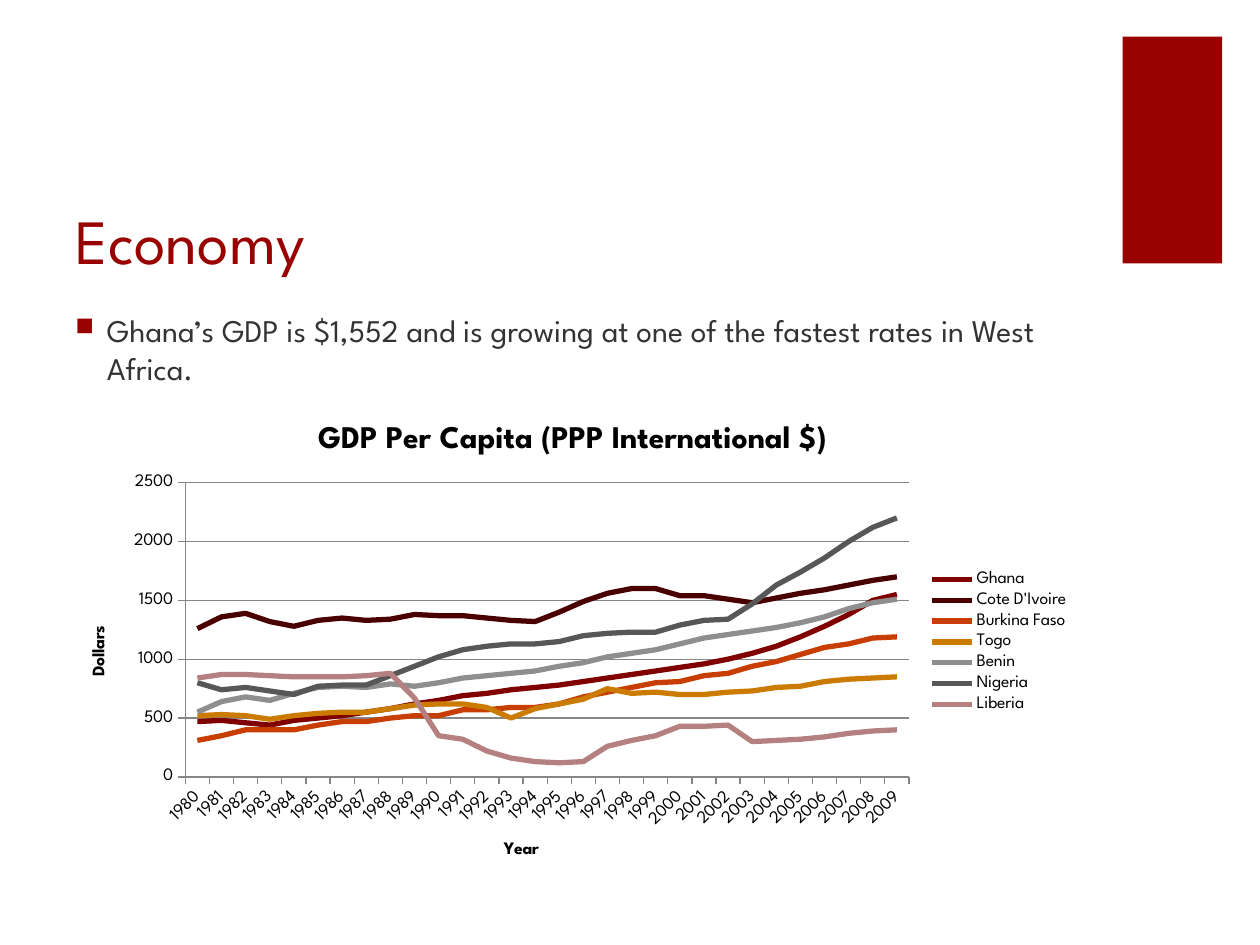
from lxml.etree import SubElement
from pptx import Presentation
from pptx.chart.data import CategoryChartData
from pptx.dml.color import RGBColor
from pptx.enum.chart import XL_CHART_TYPE, XL_LEGEND_POSITION, XL_TICK_MARK
from pptx.enum.shapes import MSO_SHAPE
from pptx.enum.text import MSO_ANCHOR
from pptx.oxml import parse_xml
from pptx.oxml.ns import nsdecls, qn
from pptx.util import Inches, Pt

FONT = "League Spartan"
COLORS = {
    "accent": "990000", "body": "333333", "label": "000000", "axis": "868686",
    "Ghana": "800000", "Cote D'Ivoire": "4A0000", "Burkina Faso": "C83D00",
    "Togo": "CB7B00", "Benin": "8E8E8E", "Nigeria": "575757", "Liberia": "B58080",
}
YEARS = range(1980, 2010)
GDP = {
    "Ghana": [470, 480, 460, 440, 480, 500, 520, 550, 580, 620,
              650, 690, 710, 740, 760, 780, 810, 840, 870, 900,
              930, 960, 1000, 1050, 1110, 1190, 1280, 1380, 1500, 1550],
    "Cote D'Ivoire": [1260, 1360, 1390, 1320, 1280, 1330, 1350, 1330, 1340, 1380,
                      1370, 1370, 1350, 1330, 1320, 1400, 1490, 1560, 1600, 1600,
                      1540, 1540, 1510, 1480, 1520, 1560, 1590, 1630, 1670, 1700],
    "Burkina Faso": [310, 350, 400, 400, 400, 440, 470, 470, 500, 520,
                     520, 570, 570, 590, 590, 620, 680, 720, 760, 800,
                     810, 860, 880, 940, 980, 1040, 1100, 1130, 1180, 1190],
    "Togo": [520, 530, 520, 490, 520, 540, 550, 550, 580, 610,
             620, 620, 590, 500, 580, 620, 660, 750, 710, 720,
             700, 700, 720, 730, 760, 770, 810, 830, 840, 850],
    "Benin": [550, 640, 680, 650, 710, 760, 770, 760, 790, 770,
              800, 840, 860, 880, 900, 940, 970, 1020, 1050, 1080,
              1130, 1180, 1210, 1240, 1270, 1310, 1360, 1430, 1480, 1510],
    "Nigeria": [800, 740, 760, 730, 700, 770, 780, 780, 860, 940,
                1020, 1080, 1110, 1130, 1130, 1150, 1200, 1220, 1230, 1230,
                1290, 1330, 1340, 1470, 1630, 1740, 1860, 2000, 2120, 2200],
    "Liberia": [840, 870, 870, 860, 850, 850, 850, 860, 880, 670,
                350, 320, 220, 160, 130, 120, 130, 260, 310, 350,
                430, 430, 440, 300, 310, 320, 340, 370, 390, 400],
}


def rgb(name):
    return RGBColor.from_string(COLORS[name])


def style_font(font, size, color, bold=False):
    font.name, font.size, font.bold = FONT, Pt(size), bold
    font.color.rgb = rgb(color)


def add_accent_block(slide, box):
    block = slide.shapes.add_shape(MSO_SHAPE.RECTANGLE, *box)
    block.shadow.inherit = False
    block.fill.solid()
    block.fill.fore_color.rgb = rgb("accent")
    block.line.fill.background()


def add_text(slide, box, text, size, color, anchor):
    frame = slide.shapes.add_textbox(*box).text_frame
    frame.word_wrap = True
    frame.vertical_anchor = anchor
    paragraph = frame.paragraphs[0]
    paragraph.text = text
    style_font(paragraph.font, size, color)
    return paragraph


def add_heading(slide, box):
    add_text(slide, box, "Economy", 36, "accent", MSO_ANCHOR.BOTTOM)


def add_bullet_text(slide, box):
    text = "Ghana’s GDP is $1,552 and is growing at one of the fastest rates in West Africa."
    paragraph = add_text(slide, box, text, 18, "body", MSO_ANCHOR.TOP)
    # Square bullet with a hanging indent
    props = paragraph._p.get_or_add_pPr()
    props.set("marL", str(Inches(0.25)))
    props.set("indent", str(-Inches(0.25)))
    bullet = [
        f'<a:buClr {nsdecls("a")}><a:srgbClr val="{COLORS["accent"]}"/></a:buClr>',
        f'<a:buSzPct {nsdecls("a")} val="80000"/>',
        f'<a:buChar {nsdecls("a")} char="■"/>',
    ]
    for position, xml in enumerate(bullet):
        props.insert(position, parse_xml(xml))


def set_title(owner, text, size):
    owner.has_title = True
    frame = getattr(owner, "chart_title", None) or owner.axis_title
    frame = frame.text_frame
    frame.text = text
    style_font(frame.paragraphs[0].font, size, "label", bold=True)


def set_plot_layout(chart, **shares):
    plot_area = chart._chartSpace.chart.plotArea
    for old in plot_area.findall(qn("c:layout")):
        plot_area.remove(old)
    layout = parse_xml(f'<c:layout {nsdecls("c")}><c:manualLayout/></c:layout>')
    settings = {"layoutTarget": "inner", "xMode": "edge", "yMode": "edge", **shares}
    for tag, value in settings.items():
        SubElement(layout[0], qn(f"c:{tag}")).set("val", str(value))
    plot_area.insert(0, layout)


def add_gdp_chart(slide, box):
    data = CategoryChartData()
    data.categories = [str(year) for year in YEARS]
    for country, values in GDP.items():
        data.add_series(country, values)
    chart = slide.shapes.add_chart(XL_CHART_TYPE.LINE, *box, data).chart
    style_font(chart.font, 10, "label")
    chart.has_title = True
    title = chart.chart_title.text_frame
    title.text = "GDP Per Capita (PPP International $)"
    style_font(title.paragraphs[0].font, 18, "label", bold=True)

    # Country lines
    chart.plots[0].vary_by_categories = False
    for series in chart.plots[0].series:
        series.smooth = False
        series.format.line.width = Pt(3)
        series.format.line.color.rgb = rgb(series.name)

    # Axes
    for axis, name in ((chart.category_axis, "Year"), (chart.value_axis, "Dollars")):
        axis.has_title = True
        label = axis.axis_title.text_frame
        label.text = name
        style_font(label.paragraphs[0].font, 10, "label", bold=True)
        style_font(axis.tick_labels.font, 10, "label")
        axis.major_tick_mark = XL_TICK_MARK.OUTSIDE
        axis.format.line.color.rgb = rgb("axis")
    chart.category_axis._element.find(qn("c:txPr")).find(qn("a:bodyPr")).set("rot", "-2700000")
    dollars = chart.value_axis
    dollars.minimum_scale, dollars.maximum_scale, dollars.major_unit = 0, 2500, 500
    dollars.has_major_gridlines = True
    dollars.major_gridlines.format.line.color.rgb = rgb("axis")

    # Legend and plot position
    chart.has_legend = True
    chart.legend.position = XL_LEGEND_POSITION.RIGHT
    chart.legend.include_in_layout = False
    style_font(chart.legend.font, 10, "label")
    set_plot_layout(chart, x=0.12, y=0.17, w=0.71, h=0.61)


def main():
    prs = Presentation()
    prs.slide_width, prs.slide_height = Inches(10), Inches(7.5)
    slide = prs.slides.add_slide(prs.slide_layouts[6])

    def column_box(top, height):
        """Box in the main text column, with top and height in inches."""
        return Inches(0.5), Inches(top), Inches(8.09), Inches(height)

    add_accent_block(slide, [Inches(n) for n in (8.91, 0.29, 0.79, 1.8)])
    add_heading(slide, column_box(1, 1.25))
    add_bullet_text(slide, column_box(2.42, 2.1))
    add_gdp_chart(slide, column_box(3.18, 3.83))
    prs.save("out.pptx")


if __name__ == "__main__":
    main()
